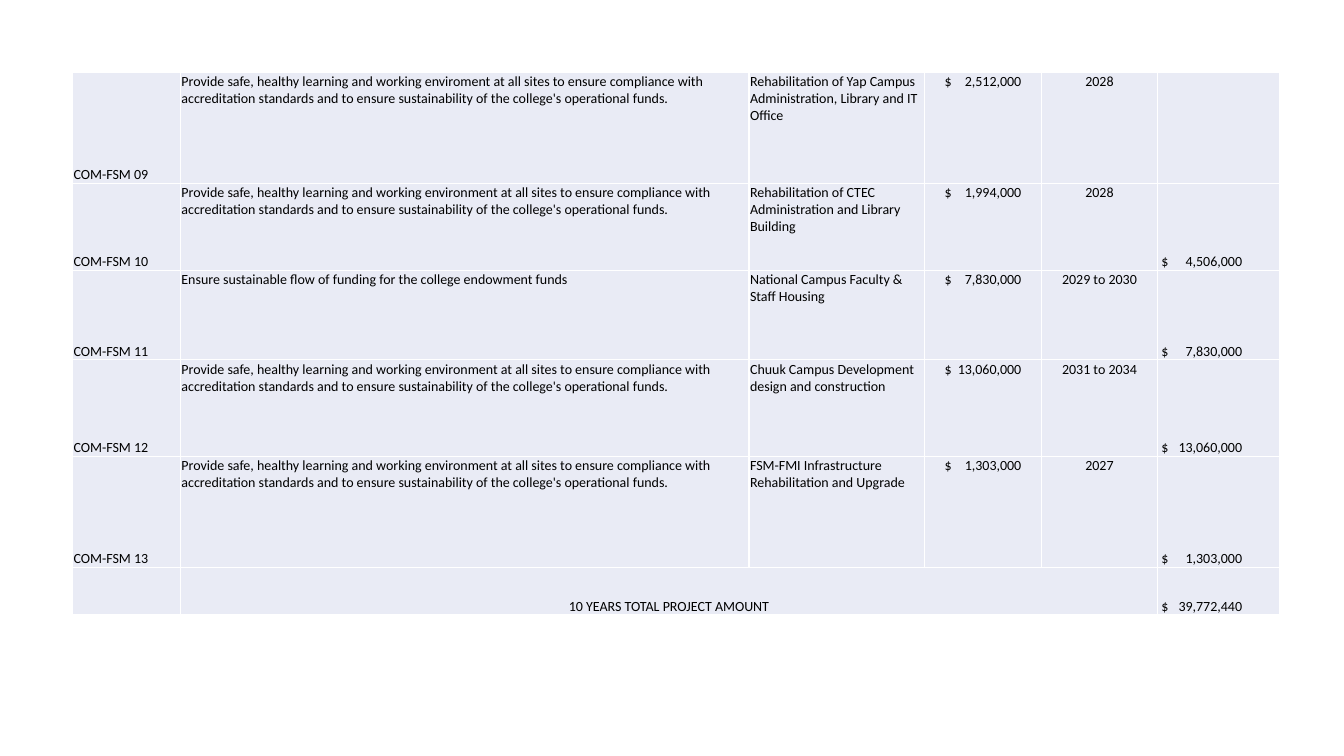
import pptx
import pptx.util
import pptx.dml.color
import pptx.enum.text
import pptx.oxml
import pptx.oxml.ns

Inches = pptx.util.Inches
ALIGN = pptx.enum.text.PP_ALIGN
ANCHOR = pptx.enum.text.MSO_ANCHOR
BLACK = pptx.dml.color.RGBColor(0x00, 0x00, 0x00)
WHITE = pptx.dml.color.RGBColor(0xFF, 0xFF, 0xFF)
PALE_BLUE = pptx.dml.color.RGBColor(0xE9, 0xEB, 0xF5)

COL_WIDTHS = [1.07, 5.64, 1.74, 1.16, 1.15, 1.21]
ROW_HEIGHTS = [1.1, 0.86, 0.89, 0.96, 1.1, 0.47]
COL_ALIGNS = [ALIGN.LEFT, ALIGN.LEFT, ALIGN.LEFT, ALIGN.LEFT, ALIGN.CENTER, ALIGN.LEFT]
COL_INSETS = [0.01, 0.01, 0.01, 0.2, 0.01, 0.04]
AMOUNT_TABS = {3: 0.76, 5: 0.8}
BOTTOM_COLS = (0, 5)

SAFE_SITES = (
    "Provide safe, healthy learning and working environment at all sites to ensure compliance with "
    "accreditation standards and to ensure sustainability of the college's operational funds."
)
PROJECTS = [
    ["COM-FSM 09", SAFE_SITES.replace("environment", "enviroment"),
     "Rehabilitation of Yap Campus Administration, Library and IT Office", "$\t2,512,000", "2028", ""],
    ["COM-FSM 10", SAFE_SITES,
     "Rehabilitation of CTEC Administration and Library Building", "$\t1,994,000", "2028", "$\t4,506,000"],
    ["COM-FSM 11", "Ensure sustainable flow of funding for the college endowment funds",
     "National Campus Faculty & Staff Housing", "$\t7,830,000", "2029 to 2030", "$\t7,830,000"],
    ["COM-FSM 12", SAFE_SITES,
     "Chuuk Campus Development design and construction", "$\t13,060,000", "2031 to 2034", "$\t13,060,000"],
    ["COM-FSM 13", SAFE_SITES,
     "FSM-FMI Infrastructure Rehabilitation and Upgrade", "$\t1,303,000", "2027", "$\t1,303,000"],
    ["", "10 YEARS TOTAL PROJECT AMOUNT", "", "", "", "$\t39,772,440"],
]


def add_borders(cell):
    """Draw a thin white line on every side of a cell."""
    tcPr = cell._tc.get_or_add_tcPr()
    for i, side in enumerate(("lnL", "lnR", "lnT", "lnB")):
        tcPr.insert(i, pptx.oxml.parse_xml(
            f'<a:{side} {pptx.oxml.ns.nsdecls("a")} w="12700"><a:solidFill>'
            f'<a:srgbClr val="{WHITE}"/></a:solidFill></a:{side}>'))


def add_right_tab(p, position):
    """Give a paragraph one right-aligned tab stop."""
    p._p.get_or_add_pPr().append(pptx.oxml.parse_xml(
        f'<a:tabLst {pptx.oxml.ns.nsdecls("a")}>'
        f'<a:tab pos="{Inches(position)}" algn="r"/></a:tabLst>'))


def fill_cell(cell, text, col):
    """Style a cell by its column and write its text."""
    cell.fill.solid()
    cell.fill.fore_color.rgb = PALE_BLUE
    add_borders(cell)
    cell.margin_left = Inches(COL_INSETS[col])
    cell.margin_right = cell.margin_top = Inches(0.01)
    cell.margin_bottom = 0
    cell.vertical_anchor = ANCHOR.BOTTOM if col in BOTTOM_COLS else ANCHOR.TOP
    if not text:
        return
    cell.text = text
    p = cell.text_frame.paragraphs[0]
    p.alignment = COL_ALIGNS[col]
    if col in AMOUNT_TABS:
        add_right_tab(p, AMOUNT_TABS[col])
    p.font.name = "Calibri"
    p.font.size = pptx.util.Pt(10)
    p.font.color.rgb = BLACK


def add_project_table(slide, left, top, width, height):
    """Place the project funding table in the given box."""
    table = slide.shapes.add_table(
        len(ROW_HEIGHTS), len(COL_WIDTHS),
        Inches(left), Inches(top), Inches(width), Inches(height)).table
    table.first_row = table.horz_banding = False
    for column, size in zip(table.columns, COL_WIDTHS):
        column.width = Inches(size)
    for row, size in zip(table.rows, ROW_HEIGHTS):
        row.height = Inches(size)
    for r, project in enumerate(PROJECTS):
        for c, text in enumerate(project):
            fill_cell(table.cell(r, c), text, c)
    total = table.cell(len(PROJECTS) - 1, 1)
    total.merge(table.cell(len(PROJECTS) - 1, 4))
    total.vertical_anchor = ANCHOR.BOTTOM
    total.text_frame.paragraphs[0].alignment = ALIGN.CENTER


def main():
    """Build the slide and save it."""
    prs = pptx.Presentation()
    prs.slide_width, prs.slide_height = Inches(13.33), Inches(7.5)
    slide = prs.slides.add_slide(prs.slide_layouts[6])
    add_project_table(slide, 0.72, 0.72, sum(COL_WIDTHS), sum(ROW_HEIGHTS))
    prs.save("out.pptx")


if __name__ == "__main__":
    main()
